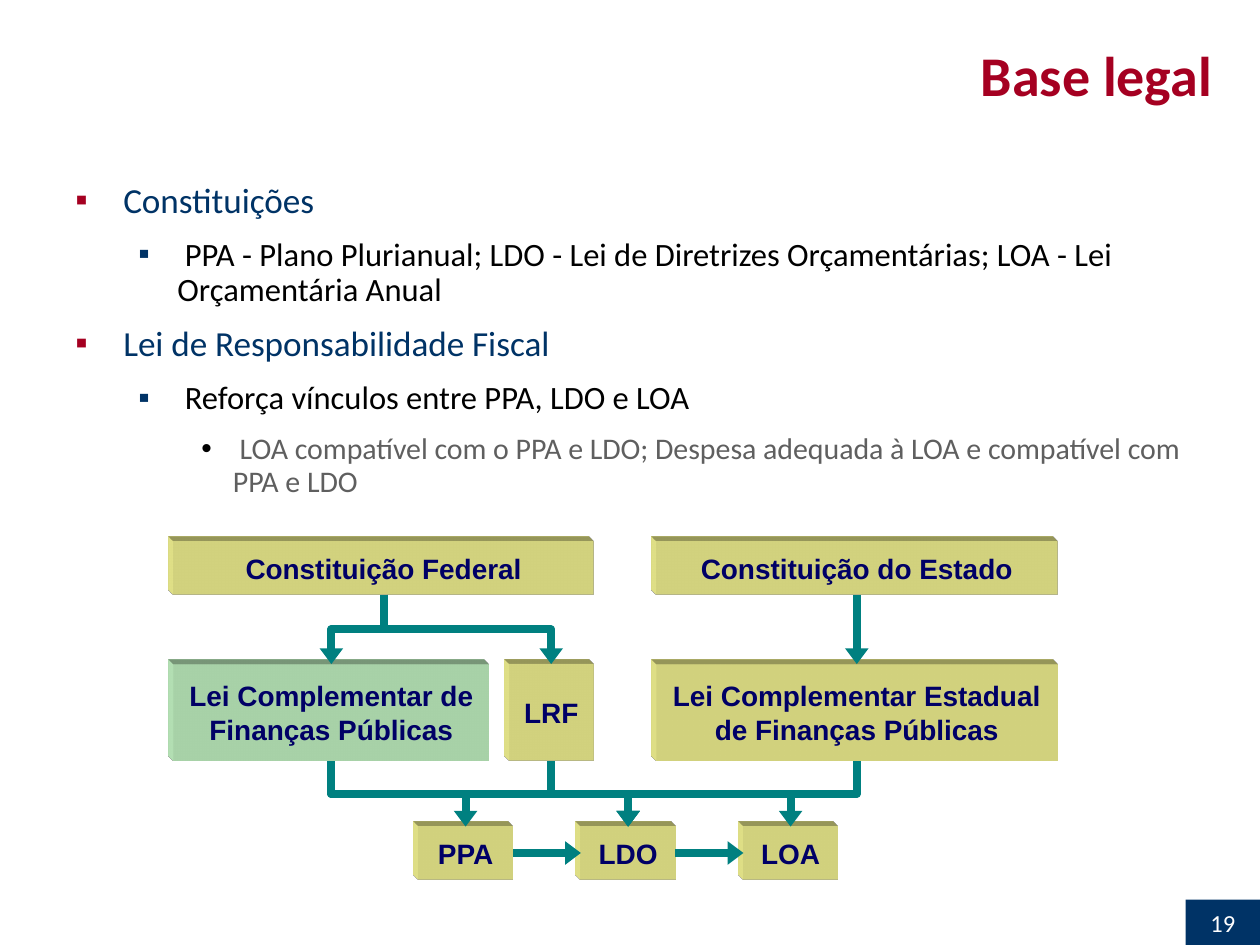
"""Builds the "Base legal" slide: bulleted legal basis above a flow of budget laws."""
from lxml.etree import SubElement
from pptx import Presentation
from pptx.dml.color import RGBColor
from pptx.enum.shapes import MSO_CONNECTOR, MSO_SHAPE
from pptx.enum.text import MSO_ANCHOR, PP_ALIGN
from pptx.oxml import parse_xml
from pptx.oxml.ns import nsdecls, qn
from pptx.util import Inches, Pt

C = {"red": "A50021", "navy": "003366", "black": "000000", "gray": "5F5F5F",
     "teal": "008080", "ink": "000066", "yellow": "FFFF99", "green": "CCFFCC",
     "white": "FFFFFF"}

prs = Presentation()
prs.slide_width, prs.slide_height = Inches(10), Inches(7.5)
col, row = prs.slide_width / 100, prs.slide_height / 75
s = prs.slides.add_slide(prs.slide_layouts[6])


def write(p, text, size=16, color="ink", font="Arial", bold=False, align=PP_ALIGN.CENTER):
    p.alignment = align
    r = p.add_run()
    r.text = text
    r.font.size, r.font.name, r.font.bold = Pt(size), font, bold
    r.font.color.rgb = RGBColor.from_string(C[color])


def add_rect(x, y, w, h, fill):
    sp = s.shapes.add_shape(MSO_SHAPE.RECTANGLE, int(x * col), int(y * row),
                            int(w * col), int(h * row))
    sp.shadow.inherit = False
    sp.fill.solid()
    sp.fill.fore_color.rgb = RGBColor.from_string(C[fill])
    sp.line.fill.background()
    sp.text_frame.word_wrap = True
    sp.text_frame.vertical_anchor = MSO_ANCHOR.MIDDLE
    return sp


tf = s.shapes.add_textbox(int(28.1 * col), int(0.3 * row), int(69.1 * col), int(11.2 * row)).text_frame
tf.word_wrap = True
tf.vertical_anchor = MSO_ANCHOR.MIDDLE
write(tf.paragraphs[0], "Base legal", size=32, color="red", font="Calibri", bold=True,
      align=PP_ALIGN.RIGHT)

levels = [(3.8, 3.8, "▪", "red", 20.1, "navy"),
          (8.1, 3.1, "▪", "navy", 18.6, "black"),
          (12.5, 2.5, "•", "black", 17.1, "gray")]
bullets = [
    (0, "Constituições"),
    (1, " PPA - Plano Plurianual; LDO - Lei de Diretrizes Orçamentárias; LOA - Lei Orçamentária Anual"),
    (0, "Lei de Responsabilidade Fiscal"),
    (1, " Reforça vínculos entre PPA, LDO e LOA"),
    (2, " LOA compatível com o PPA e LDO; Despesa adequada à LOA e compatível com PPA e LDO"),
]
tf = s.shapes.add_textbox(int(5 * col), int(14 * row), int(89.9 * col), int(27.5 * row)).text_frame
tf.word_wrap = True
for i, (level, text) in enumerate(bullets):
    margin, hang, mark, mark_color, size, color = levels[level]
    p = tf.add_paragraph() if i else tf.paragraphs[0]
    p.level = level
    p.line_spacing = 0.9
    p.space_before = Pt(10 if i else 0)
    write(p, text, size=size, color=color, font="Calibri", align=PP_ALIGN.LEFT)
    pPr = p._p.get_or_add_pPr()
    pPr.set("marL", str(int(margin * col)))
    pPr.set("indent", str(int(-hang * col)))
    SubElement(SubElement(pPr, qn("a:buClr")), qn("a:srgbClr"), val=C[mark_color])
    SubElement(pPr, qn("a:buFont"), typeface="Arial")
    SubElement(pPr, qn("a:buChar"), char=mark)

laws = [
    ("Constituição Federal", 13.8, 43, 33.3, 4.2, "yellow"),
    ("Constituição do Estado", 52.1, 43, 31.8, 4.2, "yellow"),
    ("Lei Complementar de Finanças Públicas", 13.8, 52.7, 25, 7.7, "green"),
    ("LRF", 40.4, 52.7, 6.7, 7.7, "yellow"),
    ("Lei Complementar Estadual de Finanças Públicas", 52.1, 52.7, 31.8, 7.7, "yellow"),
]
plans = [(name, 33.2 + 12.9 * i, 65.6, 7.5, 4.2, "yellow")
         for i, name in enumerate(("PPA", "LDO", "LOA"))]
boxes = []
for text, x, y, w, h, fill in laws + plans:
    sp = add_rect(x, y, w, h, fill)
    write(sp.text_frame.paragraphs[0], text, bold=True)
    sp._element.spPr.append(parse_xml(
        f'<a:scene3d {nsdecls("a")}><a:camera prst="legacyObliqueTopLeft"/>'
        '<a:lightRig rig="legacyFlat3" dir="b"/></a:scene3d>'))
    sp._element.spPr.append(parse_xml(
        f'<a:sp3d {nsdecls("a")} extrusionH="100000" prstMaterial="legacyMatte">'
        f'<a:extrusionClr><a:srgbClr val="{C[fill]}"/></a:extrusionClr></a:sp3d>'))
    boxes.append(sp)
federal, state, federal_law, lrf, state_law, ppa, ldo, loa = boxes

arrows = []
for a, b in [(ppa, ldo), (ldo, loa)]:
    cx = s.shapes.add_connector(MSO_CONNECTOR.STRAIGHT, 0, 0, 0, 0)
    cx.begin_connect(a, 3)
    cx.end_connect(b, 1)
    arrows.append(cx)

for a, b in [(federal, federal_law), (federal, lrf), (state, state_law),
             (federal_law, ppa), (federal_law, ldo), (lrf, ldo), (lrf, loa), (state_law, ldo)]:
    x1, y1 = a.left + a.width // 2, a.top + a.height
    x2, y2 = b.left + b.width // 2, b.top
    drop, run = y2 - y1, abs(x2 - x1)
    left, top = (x1 + x2 - drop) // 2, (y1 + y2 - run) // 2
    cx = s.shapes.add_connector(MSO_CONNECTOR.ELBOW, left, top, left + drop, top + run)
    xfrm = cx._element.spPr.find(qn("a:xfrm"))
    xfrm.set("rot", str((270 if x2 > x1 else 90) * 60000))
    if x2 > x1:
        xfrm.set("flipH", "1")
    arrows.append(cx)

for cx in arrows:
    cx.line.width = Pt(4.5)
    cx.line.color.rgb = RGBColor.from_string(C["teal"])
    SubElement(cx.line._get_or_add_ln(), qn("a:tailEnd"), type="triangle", w="med", len="sm")
    SubElement(cx._element.spPr, qn("a:effectLst"))

sp = add_rect(94.1, 71.4, 5.9, 3.6, "navy")
write(sp.text_frame.paragraphs[0], "19", size=14, color="white", font="Calibri")

prs.save("out.pptx")
